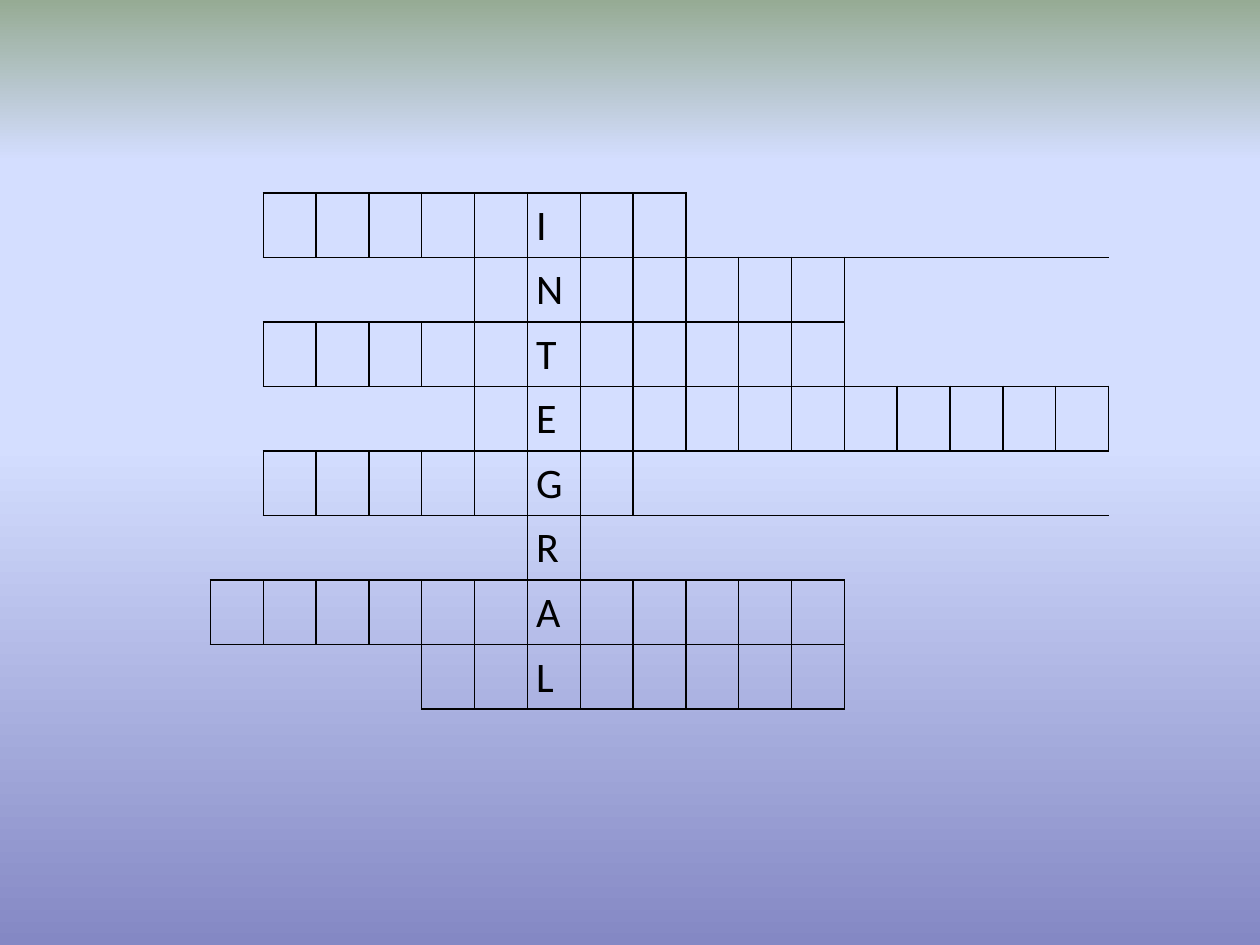
"""Build a crossword slide whose shared column spells INTEGRAL."""
from lxml import etree
from pptx import Presentation
from pptx.dml.color import RGBColor
from pptx.oxml.ns import qn
from pptx.util import Inches, Pt

COLORS = {"ink": "000000", "dusk": "8488C4", "sky": "D4DEFF", "moss": "96AB94"}
BACKGROUND_STOPS = [(0, "dusk"), (53, "sky"), (83, "sky"), (100, "moss")]
NO_STYLE = "{2D5ABB26-0587-4C30-8999-92F81FD0307C}"
SIDES = {"left": "a:lnL", "right": "a:lnR", "top": "a:lnT", "bottom": "a:lnB"}
KEYWORD = "INTEGRAL"
KEY_COLUMN = 6
COLUMN_COUNT = 17
TABLE_WIDTH, TABLE_HEIGHT = 7.13, 4.1

WORD_SPANS = [(1, 8), (5, 11), (1, 11), (5, 16), (1, 7), (6, 6), (0, 11), (4, 11)]
BLANK_SPANS = [
    (0, 0, 0, "right"), (0, 9, 16, "left bottom"),
    (1, 0, 0, ""), (1, 1, 4, "top right bottom"), (1, 12, 16, "left top"),
    (2, 0, 0, "right"), (2, 12, 16, "left bottom"),
    (3, 0, 0, ""), (3, 1, 4, "top right bottom"),
    (4, 0, 0, "right"), (4, 8, 16, "left top"),
    (5, 0, 0, "bottom"), (5, 1, 5, "top right bottom"), (5, 7, 16, "left top bottom"),
    (6, 12, 16, "left"),
    (7, 0, 0, "top"), (7, 1, 3, "top right"), (7, 12, 16, "left"),
]


def add_solid_fill(parent, color):
    solid = etree.SubElement(parent, qn("a:solidFill"))
    etree.SubElement(solid, qn("a:srgbClr"), val=COLORS[color])


def set_borders(cell, drawn_sides):
    properties = cell._tc.get_or_add_tcPr()
    for position, (side, tag) in enumerate(SIDES.items()):
        line = etree.Element(qn(tag), w=str(Pt(1)))
        if side in drawn_sides:
            add_solid_fill(line, "ink")
        else:
            etree.SubElement(line, qn("a:noFill"))
        properties.insert(position, line)


deck = Presentation()
deck.slide_width, deck.slide_height = Inches(10), Inches(7.5)
page = deck.slides.add_slide(deck.slide_layouts[6])

background = page.background.fill
background.gradient()
background.gradient_angle = 90
stop_list = page._element.find(".//" + qn("a:gsLst"))
for stop in list(stop_list):
    stop_list.remove(stop)
for percent, color in BACKGROUND_STOPS:
    stop = etree.SubElement(stop_list, qn("a:gs"), pos=str(percent * 1000))
    etree.SubElement(stop, qn("a:srgbClr"), val=COLORS[color])

crossword = page.shapes.add_table(
    len(KEYWORD), COLUMN_COUNT, Inches(1.67), Inches(1.53),
    Inches(TABLE_WIDTH), Inches(TABLE_HEIGHT),
).table
crossword.first_row = False
crossword.horz_banding = False
crossword._tbl.tblPr.find(qn("a:tableStyleId")).text = NO_STYLE
for column in crossword.columns:
    column.width = Inches(TABLE_WIDTH / COLUMN_COUNT)
for row in crossword.rows:
    row.height = Inches(TABLE_HEIGHT / len(KEYWORD))
for cell in crossword.iter_cells():
    cell.fill.background()

for row_index, (letter, (first, last)) in enumerate(zip(KEYWORD, WORD_SPANS)):
    for column_index in range(first, last + 1):
        set_borders(crossword.cell(row_index, column_index), SIDES)
    key_cell = crossword.cell(row_index, KEY_COLUMN)
    key_cell.margin_left = key_cell.margin_right = Inches(0.07)
    key_cell.margin_top = key_cell.margin_bottom = 0
    para = key_cell.text_frame.paragraphs[0]
    para.text = letter
    para.line_spacing = 1.15
    font = para.runs[0].font
    font.name = "Calibri"
    font.size = Pt(24)
    font.color.rgb = RGBColor.from_string(COLORS["ink"])

for row_index, first, last, sides in BLANK_SPANS:
    blank = crossword.cell(row_index, first)
    if last > first:
        blank.merge(crossword.cell(row_index, last))
    set_borders(blank, sides.split())

deck.save("out.pptx")
